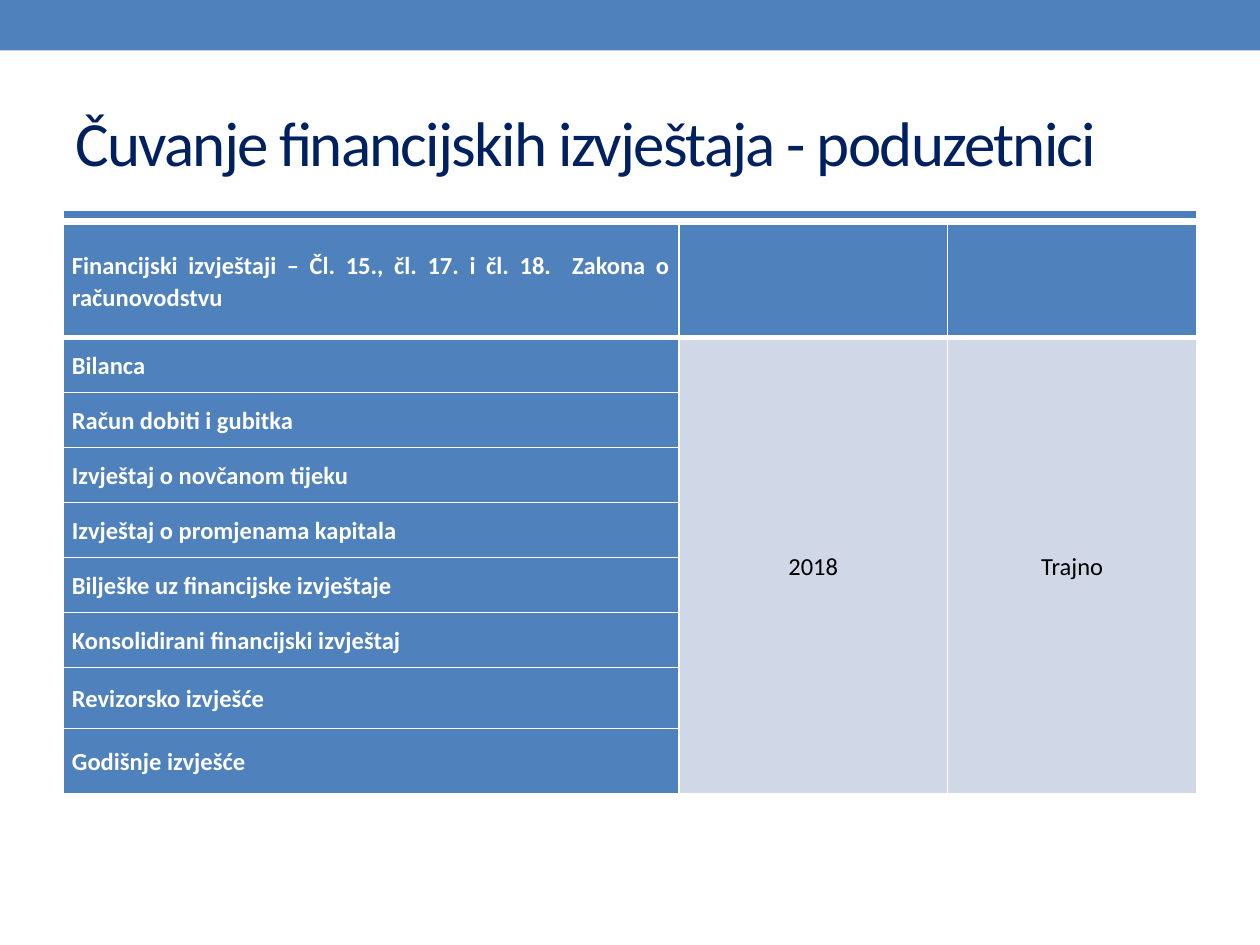
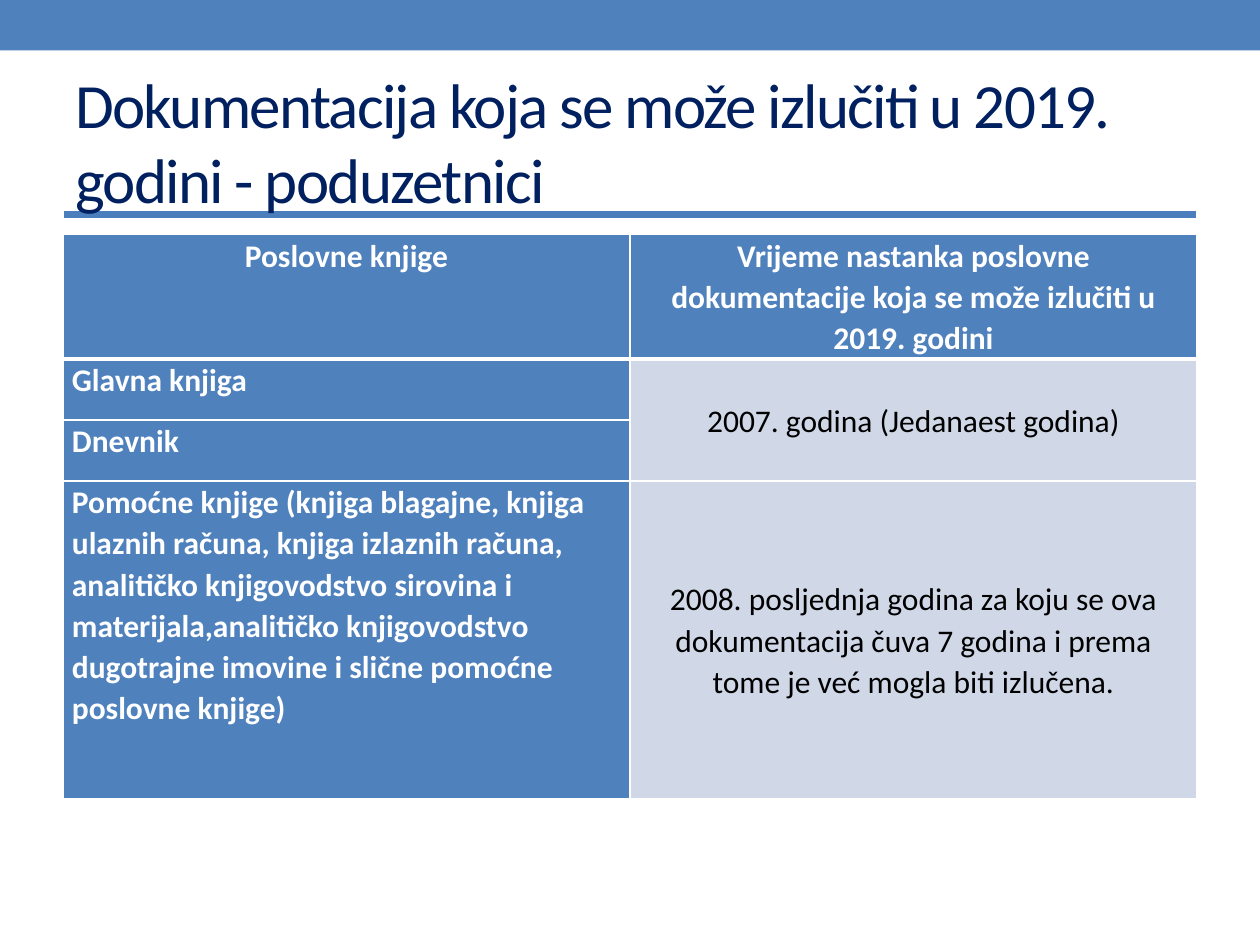
from lxml.etree import SubElement
from pptx import Presentation
from pptx.dml.color import RGBColor
from pptx.enum.shapes import MSO_CONNECTOR, MSO_SHAPE
from pptx.enum.text import MSO_ANCHOR as Anchor, PP_ALIGN as Align
from pptx.oxml.ns import qn
from pptx.util import Cm, Pt

BLUE = RGBColor(0x4F, 0x81, 0xBD)
RULE_BLUE = RGBColor(0x4B, 0x7E, 0xBC)
PALE_BLUE = RGBColor(0xD0, 0xD8, 0xE8)
NAVY = RGBColor(0x00, 0x20, 0x60)
WHITE = RGBColor(0xFF, 0xFF, 0xFF)
BLACK = RGBColor(0x00, 0x00, 0x00)
FONT = "Calibri"
LEFT = 1.27
RULE_LEFT, RULE_RIGHT, RULE_TOP = 1.3, 24.1, 4.32

STATEMENTS = [
    "Bilanca",
    "Račun dobiti i gubitka",
    "Izvještaj o novčanom tijeku",
    "Izvještaj o promjenama kapitala",
    "Bilješke uz financijske izvještaje",
    "Konsolidirani financijski izvještaj",
    "Revizorsko izvješće",
    "Godišnje izvješće",
]


def write_text(frame, text, size, color, bold=False, align=Align.LEFT,
               line_spacing=1.0, space_after=0, tracking=0):
    frame.word_wrap = True
    paragraph = frame.paragraphs[0]
    paragraph.alignment = align
    paragraph.line_spacing = line_spacing
    paragraph.space_after = Pt(space_after)
    run = paragraph.add_run()
    run.text = text
    run.font.name = FONT
    run.font.size = Pt(size)
    run.font.bold = bold
    run.font.color.rgb = color
    if tracking:
        run._r.get_or_add_rPr().set("spc", str(tracking * 100))


def add_titled_slide(presentation, title):
    slide = presentation.slides.add_slide(presentation.slide_layouts[6])
    band = slide.shapes.add_shape(MSO_SHAPE.RECTANGLE, 0, 0, presentation.slide_width, Cm(1.02))
    band.shadow.inherit = False
    band.fill.solid()
    band.fill.fore_color.rgb = BLUE
    band.line.fill.background()

    rule = slide.shapes.add_connector(
        MSO_CONNECTOR.STRAIGHT, Cm(RULE_LEFT), Cm(RULE_TOP), Cm(RULE_RIGHT), Cm(RULE_TOP))
    rule.line.color.rgb = RULE_BLUE
    rule.line.width = Pt(4)
    SubElement(rule._element.spPr, qn("a:effectLst"))

    box = slide.shapes.add_textbox(Cm(LEFT), Cm(1.47), Cm(22.86), Cm(2.74))
    box.text_frame.vertical_anchor = Anchor.MIDDLE
    write_text(box.text_frame, title, 36, NAVY, tracking=-1)
    return slide


def set_borders(cell, top, bottom):
    properties = cell._tc.get_or_add_tcPr()
    for side, width in (("L", 1), ("R", 1), ("T", top), ("B", bottom)):
        line = SubElement(properties, qn(f"a:ln{side}"), w=str(Pt(width)))
        fill = SubElement(line, qn("a:solidFill"))
        SubElement(fill, qn("a:srgbClr"), val=str(WHITE))


def add_table(slide, top, widths, heights, merges=()):
    frame = slide.shapes.add_table(
        len(heights), len(widths), Cm(LEFT), Cm(top), Cm(sum(widths)), Cm(sum(heights)))
    table = frame.table
    table.horz_banding = False
    for column, width in zip(table.columns, widths):
        column.width = Cm(width)
    for row, height in zip(table.rows, heights):
        row.height = Cm(height)
    for first, last in merges:
        table.cell(*first).merge(table.cell(*last))
    for row_index, row in enumerate(table.rows):
        for column_index, cell in enumerate(row.cells):
            set_borders(cell, 3 if row_index == 1 else 1, 3 if row_index == 0 else 1)
            is_heading = row_index == 0 or column_index == 0
            cell.fill.solid()
            cell.fill.fore_color.rgb = BLUE if is_heading else PALE_BLUE
            cell.margin_left = cell.margin_right = Cm(0.18)
            cell.margin_top = cell.margin_bottom = 0
    return table


def fill_cell(cell, text, size, heading=True, align=Align.JUSTIFY,
              anchor=Anchor.MIDDLE, space_after=0):
    cell.vertical_anchor = anchor
    write_text(cell.text_frame, text, size, WHITE if heading else BLACK, bold=heading,
               align=align, line_spacing=1.07, space_after=space_after)


def build_statements_slide(presentation):
    slide = add_titled_slide(presentation, "Čuvanje financijskih izvještaja - poduzetnici")
    last_row = len(STATEMENTS)
    table = add_table(slide, 4.53, [12.42, 5.41, 5.03], [2.27] + [1.11] * 6 + [1.23, 1.32],
                      [((1, column), (last_row, column)) for column in (1, 2)])
    header = "Financijski izvještaji – Čl. 15., čl. 17. i čl. 18.  Zakona o računovodstvu"
    for row, text in enumerate([header] + STATEMENTS):
        fill_cell(table.cell(row, 0), text, 14, space_after=8)
    for column, text in enumerate(["2018", "Trajno"], start=1):
        fill_cell(table.cell(1, column), text, 14, heading=False,
                  align=Align.CENTER, space_after=8)


def build_disposal_slide(presentation):
    slide = add_titled_slide(
        presentation, "Dokumentacija koja se može izlučiti u 2019. godini - poduzetnici")
    table = add_table(slide, 4.73, [11.43, 11.43], [2.51, 1.23, 1.23, 6.4],
                      [((1, 1), (2, 1))])
    headers = ["Poslovne knjige",
               "Vrijeme nastanka poslovne dokumentacije koja se može izlučiti u 2019. godini"]
    for column, text in enumerate(headers):
        fill_cell(table.cell(0, column), text, 18, align=Align.CENTER, anchor=Anchor.TOP)
    books = [
        ("Glavna knjiga", Align.JUSTIFY),
        ("Dnevnik", Align.JUSTIFY),
        ("Pomoćne knjige (knjiga blagajne, knjiga ulaznih računa, knjiga izlaznih računa, "
         "analitičko knjigovodstvo sirovina i materijala,analitičko knjigovodstvo "
         "dugotrajne imovine i slične pomoćne poslovne knjige)", Align.LEFT),
    ]
    for row, (text, align) in enumerate(books, start=1):
        fill_cell(table.cell(row, 0), text, 18, align=align, anchor=Anchor.TOP)
    periods = {
        1: "2007. godina (Jedanaest godina)",
        3: "2008. posljednja godina za koju se ova dokumentacija čuva 7 godina "
           "i prema tome je već mogla biti izlučena.",
    }
    for row, text in periods.items():
        fill_cell(table.cell(row, 1), text, 18, heading=False, align=Align.CENTER)


def main():
    presentation = Presentation()
    presentation.slide_width = Cm(25.4)
    presentation.slide_height = Cm(19.05)
    build_statements_slide(presentation)
    build_disposal_slide(presentation)
    presentation.save("out.pptx")


if __name__ == "__main__":
    main()
